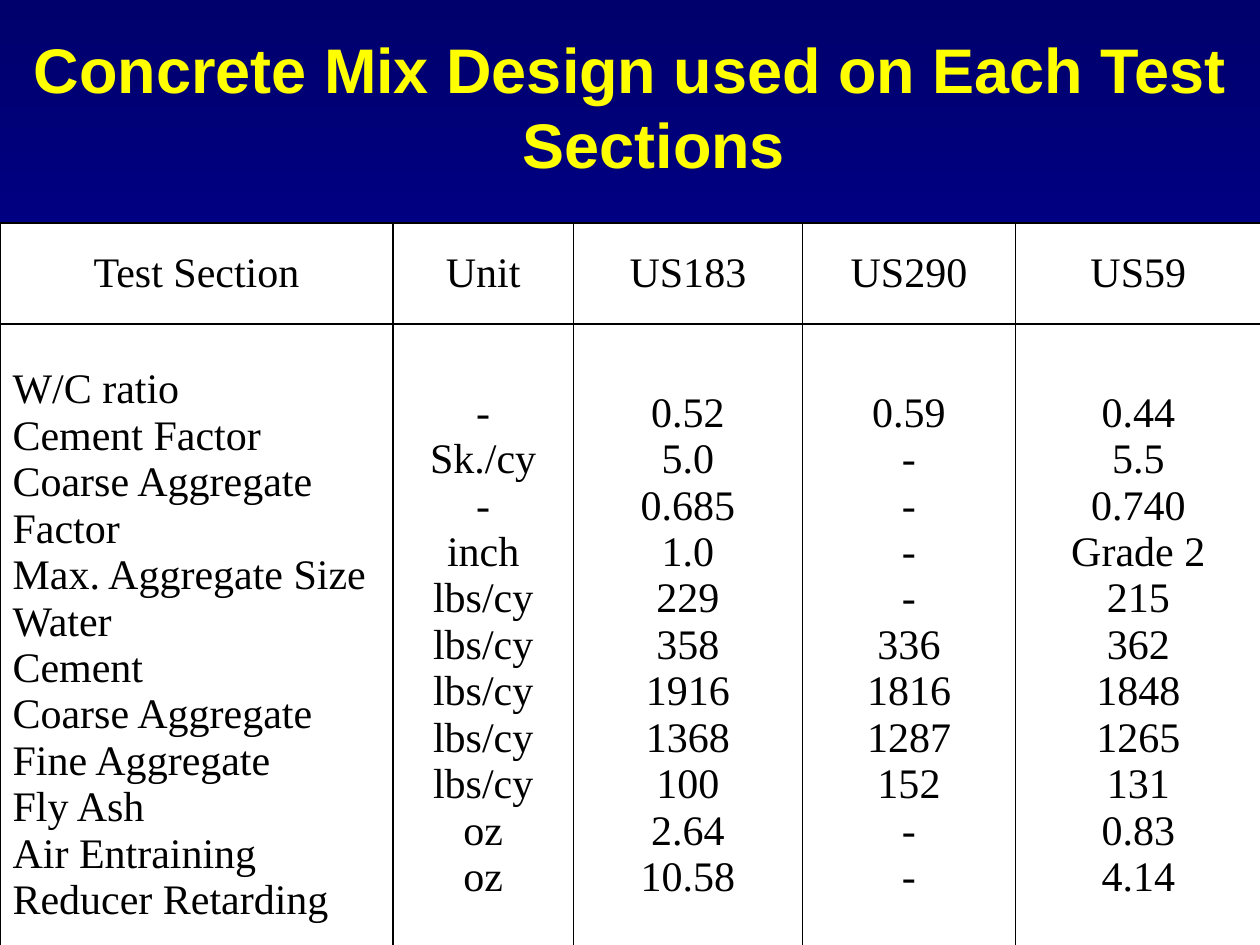
from copy import deepcopy
from typing import NamedTuple

from lxml import etree
from pptx import Presentation
from pptx.dml.color import RGBColor
from pptx.enum.text import MSO_ANCHOR, PP_ALIGN
from pptx.oxml.ns import qn
from pptx.util import Inches, Pt

CENTER, LEFT = PP_ALIGN.CENTER, PP_ALIGN.LEFT
MIDDLE = MSO_ANCHOR.MIDDLE
BLACK, WHITE, YELLOW = "000000", "FFFFFF", "FFFF00"
NAVY, BLUE = "00006D", "000099"


class Column(NamedTuple):
    head: str
    width: float
    values: list[str]
    align: PP_ALIGN = CENTER


COLUMNS = [
    Column("Test Section", 3.12, [
        "W/C ratio", "Cement Factor", "Coarse Aggregate Factor",
        "Max. Aggregate Size", "Water", "Cement", "Coarse Aggregate",
        "Fine Aggregate", "Fly Ash", "Air Entraining", "Reducer Retarding",
    ], LEFT),
    Column("Unit", 1.43, ["-", "Sk./cy", "-", "inch"] + ["lbs/cy"] * 5 + ["oz"] * 2),
    Column("US183", 1.82, ["0.52", "5.0", "0.685", "1.0", "229", "358",
                           "1916", "1368", "100", "2.64", "10.58"]),
    Column("US290", 1.69, ["0.59", "-", "-", "-", "-", "336",
                           "1816", "1287", "152", "-", "-"]),
    Column("US59", 1.95, ["0.44", "5.5", "0.740", "Grade 2", "215", "362",
                          "1848", "1265", "131", "0.83", "4.14"]),
]
ROW_HEIGHTS = [0.8, 5.1]


def rgb(color: str) -> RGBColor:
    """Turn a hex string into a colour."""
    return RGBColor.from_string(color)


def set_font(font, name: str, size: float, color: str, bold: bool = False) -> None:
    """Apply typeface, size, colour and weight."""
    font.name, font.size, font.bold = name, Pt(size), bold
    font.color.rgb = rgb(color)


def set_background(s) -> None:
    """Fill the slide with a vertical navy-blue-navy gradient."""
    fill = s.background.fill
    fill.gradient()
    fill.gradient_angle = 270
    first = fill.gradient_stops[0]._gs
    first.addnext(deepcopy(first))
    for stop, color, position in zip(fill.gradient_stops, (NAVY, BLUE, NAVY), (0, 0.5, 1)):
        stop.color.rgb = rgb(color)
        stop.position = position


def add_title(s, text: str) -> None:
    """Add the centred title with a hanging indent."""
    tf = s.shapes.add_textbox(Inches(0), Inches(0.19), Inches(10), Inches(0.78)).text_frame
    tf.word_wrap = True
    tf.text = text
    p = tf.paragraphs[0]
    p.alignment = CENTER
    pPr = p._p.get_or_add_pPr()
    pPr.set("marL", str(Inches(0.38)))
    pPr.set("indent", str(Inches(-0.38)))
    set_font(p.runs[0].font, "Arial", 36, YELLOW, True)


def set_borders(cell, color: str, width: float) -> None:
    """Draw a solid line on all four sides of a cell."""
    tcPr = cell._tc.get_or_add_tcPr()
    for i, side in enumerate(("a:lnL", "a:lnR", "a:lnT", "a:lnB")):
        ln = etree.Element(qn(side), w=str(Pt(width)))
        fill = etree.SubElement(ln, qn("a:solidFill"))
        etree.SubElement(fill, qn("a:srgbClr"), val=color)
        tcPr.insert(i, ln)


def fill_cell(cell, lines: list[str], align: PP_ALIGN) -> None:
    """Write one paragraph per line and style the cell."""
    cell.text_frame.text = "\n".join(lines)
    cell.vertical_anchor = MIDDLE
    cell.fill.solid()
    cell.fill.fore_color.rgb = rgb(WHITE)
    set_borders(cell, BLACK, 1)
    for p in cell.text_frame.paragraphs:
        p.alignment = align
        set_font(p.runs[0].font, "Times New Roman", 24, BLACK)


def add_mix_table(s, columns: list[Column]) -> None:
    """Add the mix design table."""
    table = s.shapes.add_table(len(ROW_HEIGHTS), len(columns), Inches(0), Inches(1.77),
                               Inches(10), Inches(sum(ROW_HEIGHTS))).table
    for row, height in zip(table.rows, ROW_HEIGHTS):
        row.height = Inches(height)
    for i, column in enumerate(columns):
        table.columns[i].width = Inches(column.width)
        fill_cell(table.cell(0, i), [column.head], CENTER)
        fill_cell(table.cell(1, i), column.values, column.align)


def main() -> None:
    """Build and save the slide."""
    prs = Presentation()
    prs.slide_width, prs.slide_height = Inches(10), Inches(7.5)
    s = prs.slides.add_slide(prs.slide_layouts[6])
    set_background(s)
    add_mix_table(s, COLUMNS)
    add_title(s, "Concrete Mix Design used on Each Test Sections")
    prs.save("out.pptx")


if __name__ == "__main__":
    main()
